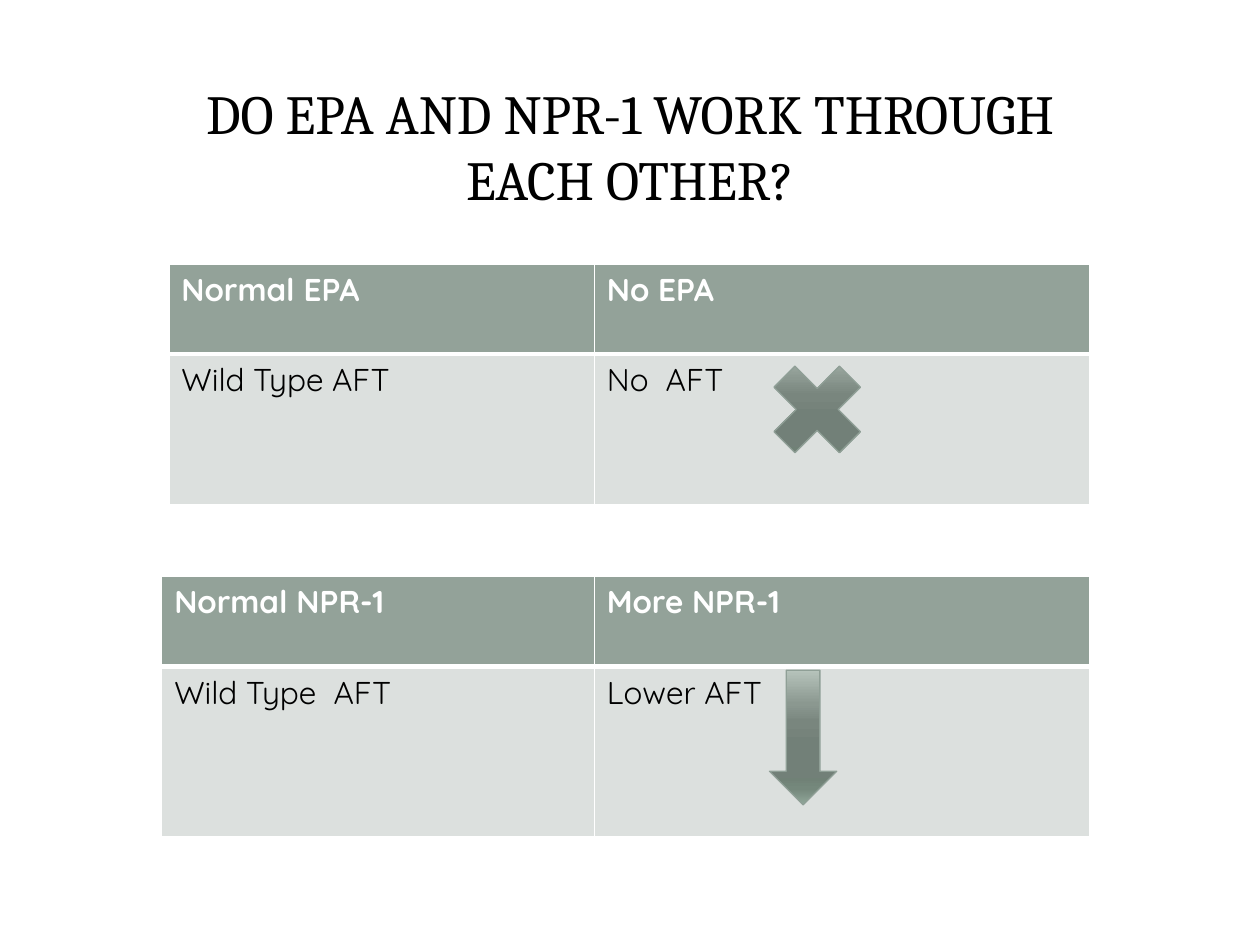
import pptx
import pptx.dml.color
import pptx.enum.shapes
import pptx.enum.text
import pptx.oxml
import pptx.oxml.ns
import pptx.util

Pt = pptx.util.Pt
RGB = pptx.dml.color.RGBColor.from_string
SHAPES = pptx.enum.shapes.MSO_SHAPE
NS = pptx.oxml.ns.nsdecls("a")
COLORS = {"paper": "FFFFFF", "ink": "000000", "header": "93A299", "body": "DCE0DE", "outline": "8F9F96"}
GRADIENT = [(0, "B6C3BB"), (25, "8B9890"), (38, "79867E"), (55, "728078"),
            (80, "708176"), (88, "75887C"), (100, "91A79A")]


def style_run(run, font, size, color, bold=False):
    run.font.name = font
    run.font.size = Pt(size)
    run.font.bold = bold
    run.font.color.rgb = RGB(color)


def add_borders(cell, widths):
    for position, (side, width) in enumerate(widths.items()):
        border = pptx.oxml.parse_xml(
            f'<a:{side} {NS} w="{Pt(width)}"><a:solidFill>'
            f'<a:srgbClr val="{COLORS["paper"]}"/></a:solidFill></a:{side}>')
        cell._tc.get_or_add_tcPr().insert(position, border)


deck = pptx.Presentation()
deck.slide_width, deck.slide_height = Pt(720), Pt(540)
slide = deck.slides.add_slide(deck.slide_layouts[6])

title = slide.shapes.add_textbox(Pt(72), Pt(39.6), Pt(576), Pt(87.1)).text_frame
title.word_wrap = True
title.vertical_anchor = pptx.enum.text.MSO_ANCHOR.MIDDLE
title.text = "DO EPA AND NPR-1 WORK THROUGH EACH OTHER?"
title.paragraphs[0].alignment = pptx.enum.text.PP_ALIGN.CENTER
style_run(title.paragraphs[0].runs[0], "Cambria", 31.5, COLORS["ink"])

right_edge, effect_width = 622.6, 283
comparisons = [
    (96.5, 150.8, (51.4, 86.4), [("Normal EPA", "No EPA"), ("Wild Type AFT", "No  AFT")]),
    (92.4, 329.1, (51.8, 97.4), [("Normal NPR-1", "More NPR-1"), ("Wild Type  AFT", "Lower AFT")]),
]
for left, top, heights, wording in comparisons:
    width = right_edge - left
    comparison = slide.shapes.add_table(2, 2, Pt(left), Pt(top), Pt(width), Pt(sum(heights))).table
    comparison.columns[0].width = Pt(width - effect_width)
    comparison.columns[1].width = Pt(effect_width)
    for row, (height, labels) in enumerate(zip(heights, wording)):
        comparison.rows[row].height = Pt(height)
        is_header = row == 0
        for column, label in enumerate(labels):
            cell = comparison.cell(row, column)
            cell.text = label
            style_run(cell.text_frame.paragraphs[0].runs[0], "Quicksand", 18,
                      COLORS["paper" if is_header else "ink"], is_header)
            cell.fill.solid()
            cell.fill.fore_color.rgb = RGB(COLORS["header" if is_header else "body"])
            add_borders(cell, {"lnL": 1, "lnR": 1, "lnT": 1 if is_header else 3,
                               "lnB": 3 if is_header else 1})

effects = [
    (SHAPES.DOWN_ARROW, 439.7, 383, 38.4, 77),
    (SHAPES.MATH_MULTIPLY, 431, 198, 72, 72),
]
stops = "".join(f'<a:gs pos="{place * 1000}"><a:srgbClr val="{color}"/></a:gs>'
                for place, color in GRADIENT)
for kind, left, top, width, height in effects:
    effect = slide.shapes.add_shape(kind, Pt(left), Pt(top), Pt(width), Pt(height))
    effect.shadow.inherit = False
    effect.line.color.rgb = RGB(COLORS["outline"])
    effect.line.width = Pt(0.75)
    effect.fill.gradient()
    effect.fill.gradient_angle = 270
    old_stops = effect._element.spPr.find(".//" + pptx.oxml.ns.qn("a:gsLst"))
    old_stops.getparent().replace(old_stops, pptx.oxml.parse_xml(f"<a:gsLst {NS}>{stops}</a:gsLst>"))

deck.save("out.pptx")
